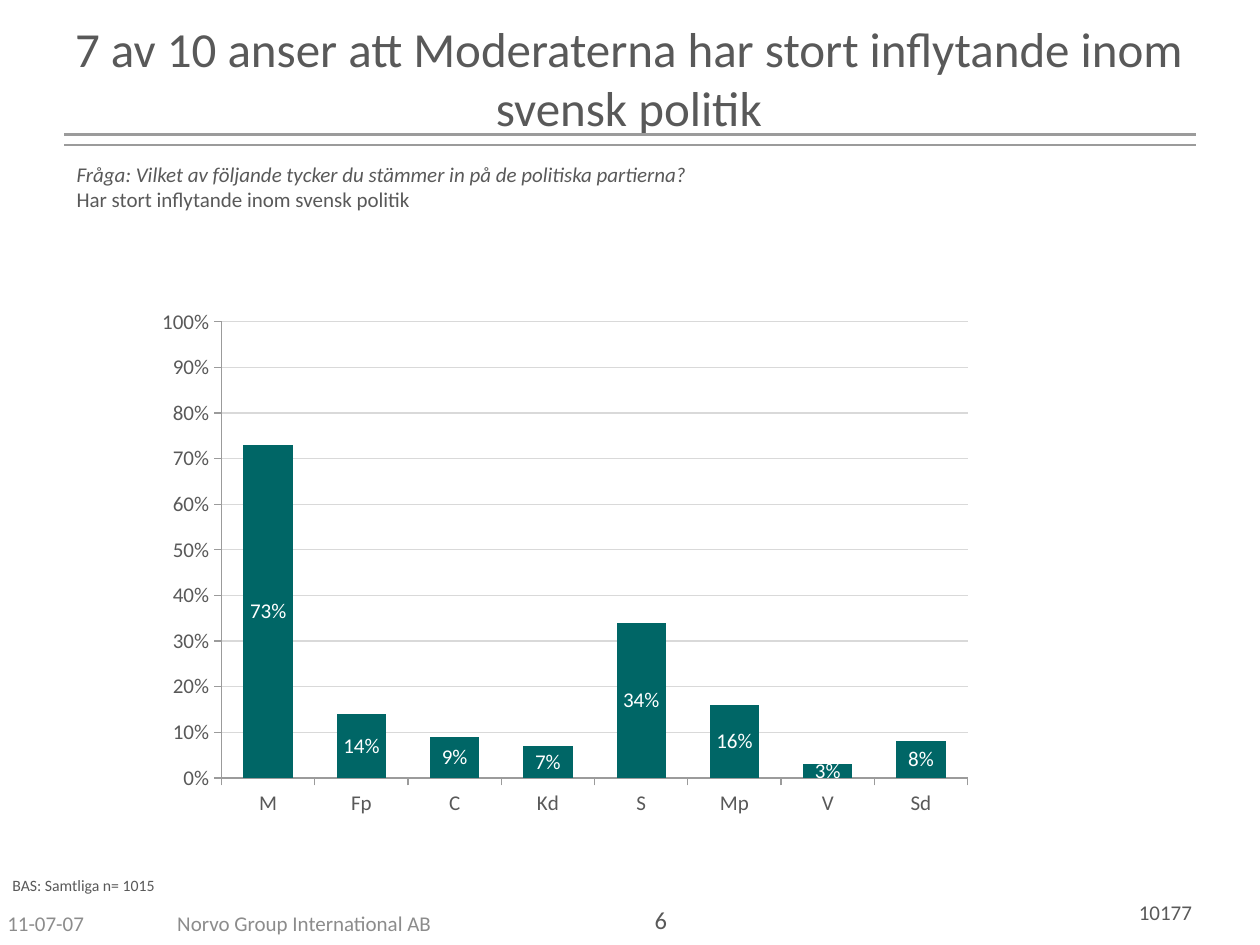
from lxml.etree import SubElement
from pptx import Presentation
from pptx.chart.data import CategoryChartData
from pptx.dml.color import RGBColor
from pptx.enum.chart import XL_CHART_TYPE as ChartType, XL_LABEL_POSITION as LabelPosition
from pptx.enum.chart import XL_TICK_MARK as TickMark
from pptx.enum.shapes import MSO_CONNECTOR as Connector
from pptx.enum.text import MSO_ANCHOR as Anchor, MSO_AUTO_SIZE as AutoSize, PP_ALIGN as Align
from pptx.oxml.ns import qn
from pptx.util import Inches, Pt

FONT = "Calibri"
TEXT = RGBColor(0x59, 0x59, 0x59)
FOOTER = RGBColor(0x8C, 0x8C, 0x8C)
RULE = RGBColor(0x9B, 0x9B, 0x9B)
GRIDLINE = RGBColor(0xD9, 0xD9, 0xD9)
BAR = RGBColor(0x00, 0x66, 0x66)
WHITE = RGBColor(0xFF, 0xFF, 0xFF)

WIDTH, HEIGHT = Inches(10), Inches(7.5)
COLUMN, ROW = WIDTH / 100, HEIGHT / 75

PARTIES = ("M", "Fp", "C", "Kd", "S", "Mp", "V", "Sd")
INFLUENCE = (0.73, 0.14, 0.09, 0.07, 0.34, 0.16, 0.03, 0.08)
PLOT_AREA = {"x": 0.07, "y": 0.14, "w": 0.77, "h": 0.73}


def cells(left, top, width, height):
    return [int(n) for n in (left * COLUMN, top * ROW, width * COLUMN, height * ROW)]


def style_font(font, size, color=TEXT):
    font.name = FONT
    font.size = Pt(size)
    font.color.rgb = color


def fill_text(shape, text, size, color=TEXT, align=Align.LEFT, anchor=Anchor.TOP):
    frame = shape.text_frame
    frame.text = text
    frame.word_wrap = True
    frame.auto_size = AutoSize.NONE
    frame.vertical_anchor = anchor
    paragraph = frame.paragraphs[0]
    paragraph.alignment = align
    for run in paragraph.runs:
        style_font(run.font, size, color)
    return paragraph


def add_text(slide, area, text, size, **look):
    return fill_text(slide.shapes.add_textbox(*cells(*area)), text, size, **look)


def add_title(slide, area, text):
    title = slide.shapes.title
    title.left, title.top, title.width, title.height = cells(*area)
    fill_text(title, text, 28, align=Align.CENTER)


def add_rule(slide, row):
    left, top, width, _ = cells(5.1, row, 89.8, 0)
    rule = slide.shapes.add_connector(Connector.STRAIGHT, left, top, left + width, top)
    rule.line.color.rgb = RULE
    rule.line.width = Pt(1.5)
    SubElement(rule._element.spPr, qn("a:effectLst"))


def set_plot_area(chart):
    plot_area = chart._chartSpace.chart.plotArea
    layout = plot_area.find(qn("c:layout"))
    if layout is None:
        layout = plot_area.makeelement(qn("c:layout"))
        plot_area.insert(0, layout)
    manual = SubElement(layout, qn("c:manualLayout"))
    SubElement(manual, qn("c:layoutTarget"), val="inner")
    for side in "xy":
        SubElement(manual, qn(f"c:{side}Mode"), val="edge")
    for side, share in PLOT_AREA.items():
        SubElement(manual, qn(f"c:{side}"), val=str(share))


def style_axis(axis):
    axis.major_tick_mark = TickMark.OUTSIDE
    axis.minor_tick_mark = TickMark.NONE
    axis.format.line.color.rgb = RULE
    style_font(axis.tick_labels.font, 12)


def add_influence_chart(slide, area):
    data = CategoryChartData(number_format="0%")
    data.categories = PARTIES
    data.add_series("Series 1", INFLUENCE)
    chart = slide.shapes.add_chart(ChartType.COLUMN_STACKED, *cells(*area), data).chart
    style_font(chart.font, 18)
    chart.has_legend = False
    chart.has_title = False
    set_plot_area(chart)

    style_axis(chart.category_axis)
    values = chart.value_axis
    style_axis(values)
    values.minimum_scale, values.maximum_scale, values.major_unit = 0, 1, 0.1
    values.tick_labels.number_format = "0%"
    values.tick_labels.number_format_is_linked = False
    values.major_gridlines.format.line.color.rgb = GRIDLINE
    values.major_gridlines.format.line.width = Pt(0.75)

    plot = chart.plots[0]
    plot.gap_width, plot.overlap = 89, 100
    plot.vary_by_categories = False
    series = plot.series[0]
    series.format.fill.solid()
    series.format.fill.fore_color.rgb = BAR
    labels = series.data_labels
    labels.show_value = True
    labels.number_format = "0%"
    labels.number_format_is_linked = False
    labels.position = LabelPosition.CENTER
    style_font(labels.font, 12, WHITE)


def main():
    presentation = Presentation()
    presentation.slide_width, presentation.slide_height = WIDTH, HEIGHT
    slide = presentation.slides.add_slide(presentation.slide_layouts.get_by_name("Title Only"))

    add_text(slide, (69.6, 70.9, 26, 3), "10177", 12, align=Align.RIGHT)
    for row in (10.7, 11.5):
        add_rule(slide, row)
    add_text(slide, (-0.4, 71.3, 23.3, 4), "11-07-07", 12, color=FOOTER, anchor=Anchor.MIDDLE)
    add_text(slide, (8.3, 71.3, 31.7, 4), "Norvo Group International AB", 12,
             color=FOOTER, align=Align.CENTER, anchor=Anchor.MIDDLE)
    add_text(slide, (40.8, 71.3, 23.3, 4), "6", 14, align=Align.CENTER)
    add_influence_chart(slide, (12.2, 18.6, 76.9, 49.6))
    add_title(slide, (4.9, 1, 90, 12.5),
              "7 av 10 anser att Moderaterna har stort inflytande inom svensk politik")
    question = add_text(
        slide, (5.1, 12.3, 89.8, 9.1),
        "Fråga: Vilket av följande tycker du stämmer in på de politiska partierna?\v"
        "Har stort inflytande inom svensk politik", 12)
    question.runs[0].font.italic = True
    add_text(slide, (0, 69, 33.9, 2.5), "BAS: Samtliga n= 1015", 9)

    presentation.save("out.pptx")


if __name__ == "__main__":
    main()
